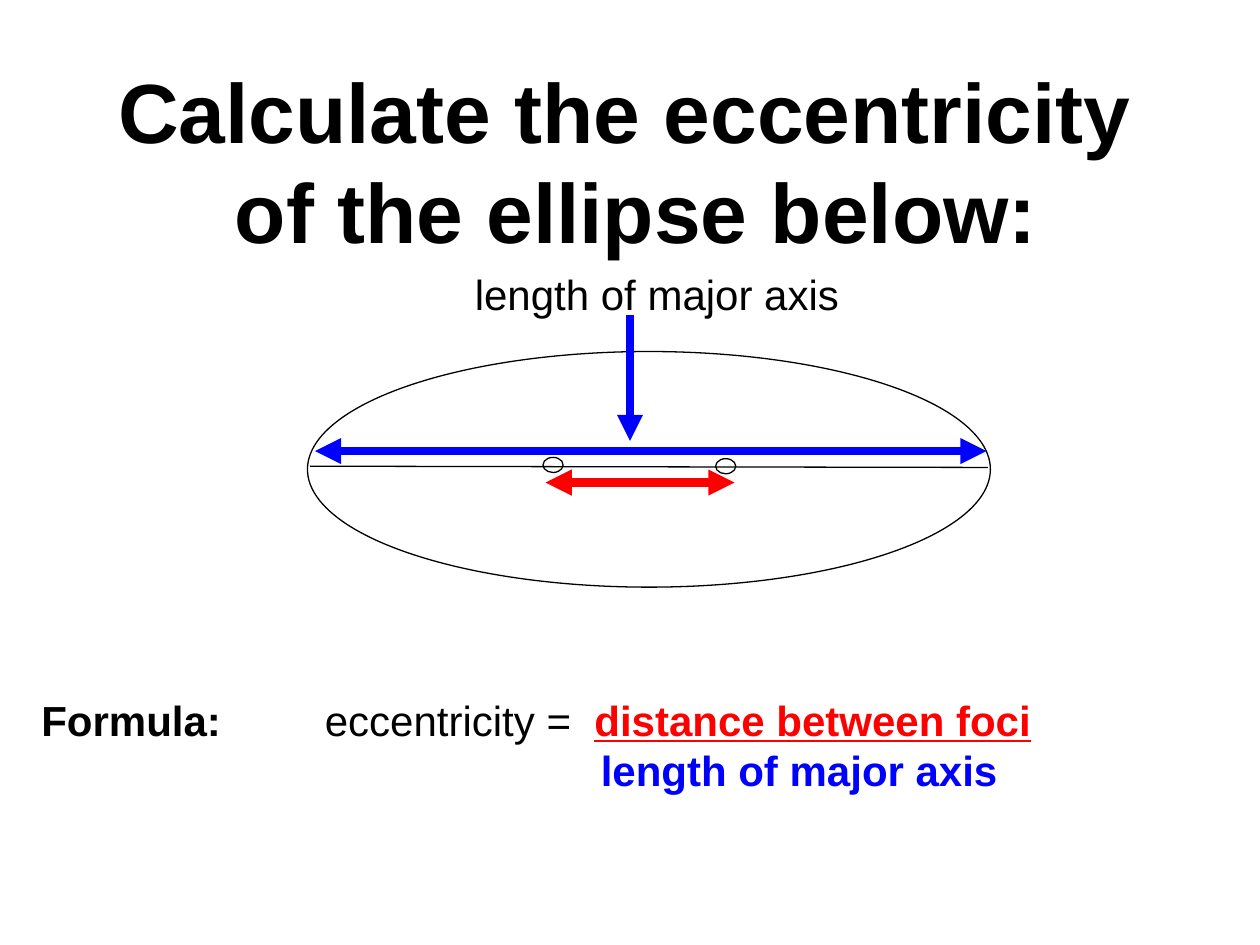
from dataclasses import dataclass
from lxml.etree import SubElement
from pptx import Presentation
from pptx.dml.color import RGBColor as Rgb
from pptx.enum.shapes import MSO_CONNECTOR as Link, MSO_SHAPE as Shape
from pptx.enum.text import MSO_ANCHOR as Anchor, MSO_AUTO_SIZE as Fit, PP_ALIGN as Align
from pptx.oxml.ns import qn
from pptx.util import Emu, Pt

PX = 9144
COLORS = {"black": "000000", "white": "FFFFFF", "red": "FF0000", "blue": "0000FF"}


@dataclass
class Run:
    text: str
    color: str = "black"
    bold: bool = False
    under: bool = False


@dataclass
class Para:
    runs: list[Run]
    indent: int = 0


@dataclass
class Label:
    box: tuple[int, int, int, int]
    paras: list[Para]
    size: int = 24
    align: Align = Align.LEFT
    anchor: Anchor = Anchor.TOP


@dataclass
class Line:
    start: tuple[int, int]
    end: tuple[int, int]
    color: str = "blue"
    width: float = 5
    heads: tuple[str, ...] = ("headEnd", "tailEnd")


def px(*vals: int) -> list[Emu]:
    return [Emu(v * PX) for v in vals]


def tint(name: str) -> Rgb:
    return Rgb.from_string(COLORS[name])


def draw_oval(tree, box: tuple[int, int, int, int]) -> None:
    oval = tree.add_shape(Shape.OVAL, *px(*box))
    oval.shadow.inherit = False
    oval.fill.solid()
    oval.fill.fore_color.rgb = tint("white")
    oval.line.color.rgb = tint("black")
    oval.line.width = Pt(0.75)


def draw_line(tree, line: Line) -> None:
    wire = tree.add_connector(Link.STRAIGHT, *px(*line.start, *line.end))
    wire.line.color.rgb = tint(line.color)
    wire.line.width = Pt(line.width)
    props = wire._element.spPr
    for head in line.heads:
        SubElement(props.find(qn("a:ln")), qn(f"a:{head}"), type="triangle")
    SubElement(props, qn("a:effectLst"))


def draw_label(tree, label: Label) -> None:
    frame = tree.add_textbox(*px(*label.box)).text_frame
    frame.word_wrap = False
    frame.auto_size = Fit.SHAPE_TO_FIT_TEXT
    frame.vertical_anchor = label.anchor
    for i, para in enumerate(label.paras):
        item = frame.add_paragraph() if i else frame.paragraphs[0]
        item.alignment = label.align
        if para.indent:
            item._p.get_or_add_pPr().set("marL", str(para.indent * PX))
        for part in para.runs:
            run = item.add_run()
            run.text = part.text
            font = run.font
            font.name = "Arial"
            font.size = Pt(label.size)
            font.bold = part.bold
            font.underline = part.under
            font.color.rgb = tint(part.color)


TITLE = Label(
    (83, 42, 844, 170),
    [Para([Run("Calculate the eccentricity ", bold=True)]),
     Para([Run("of the ellipse below:", bold=True)])],
    48, Align.CENTER, Anchor.MIDDLE,
)
OVALS = [(244, 279, 542, 187), (431, 363, 16, 12), (568, 364, 16, 12)]
AXIS = Line((246, 370), (784, 371), "black", 0.75, ())
LABELS = [
    Label((23, 546, 163, 50), [Para([Run("Formula:", bold=True)])]),
    Label((248, 546, 589, 90), [
        Para([Run("eccentricity =  "),
              Run("distance between foci ", "red", True, True)]),
        Para([Run("length of major axis", "blue", True)], 219),
    ]),
    Label((367, 208, 309, 50), [Para([Run("length of major axis")])]),
]
ARROWS = [
    Line((433, 383), (583, 383), "red"),
    Line((250, 358), (783, 358)),
    Line((500, 250), (500, 350), heads=("tailEnd",)),
]


def main() -> None:
    deck = Presentation()
    deck.slide_width, deck.slide_height = px(1000, 750)
    tree = deck.slides.add_slide(deck.slide_layouts[6]).shapes
    draw_label(tree, TITLE)
    for box in OVALS:
        draw_oval(tree, box)
    draw_line(tree, AXIS)
    for label in LABELS:
        draw_label(tree, label)
    for arrow in ARROWS:
        draw_line(tree, arrow)
    deck.save("out.pptx")


if __name__ == "__main__":
    main()
